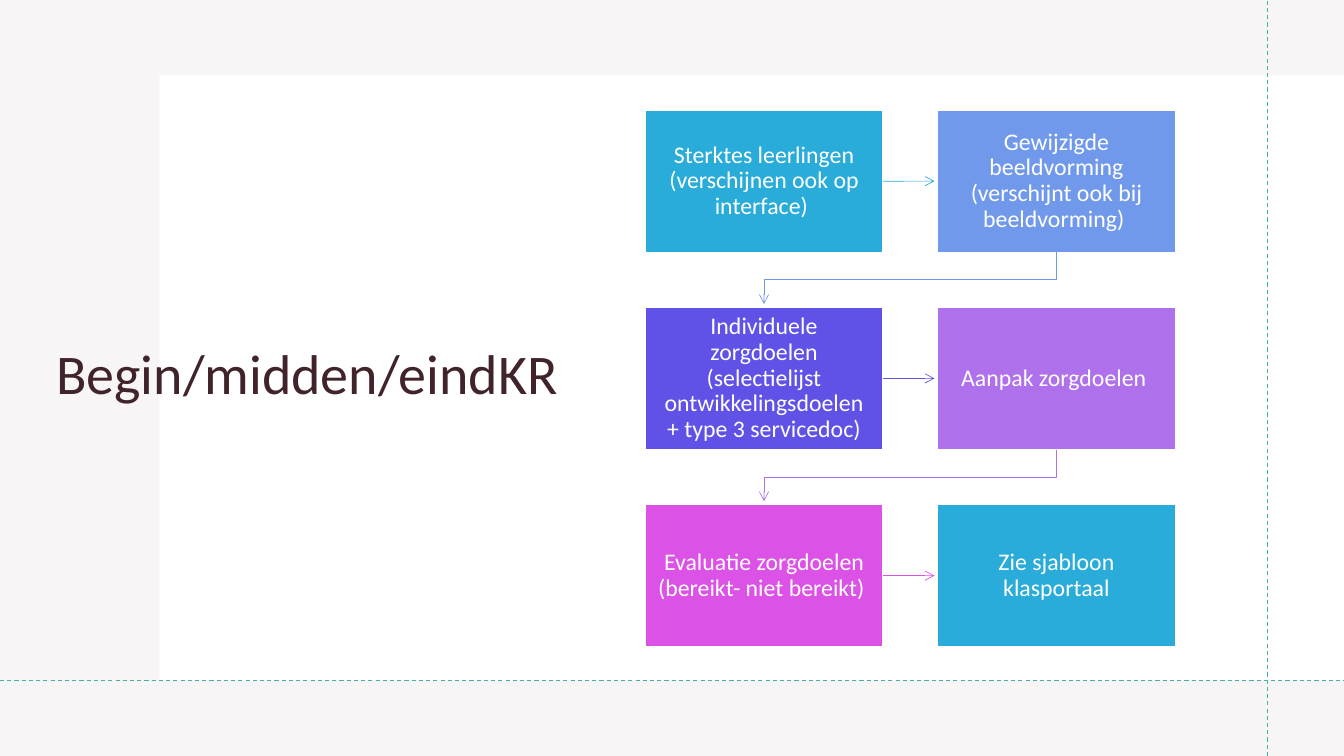
"""Build the Begin/midden/eindKR slide: a title beside a six-step flow of boxes."""
from dataclasses import dataclass

from lxml import etree
from pptx import Presentation
from pptx import util as u
from pptx.dml.color import RGBColor
from pptx.enum import dml, shapes, text
from pptx.oxml.ns import qn

COLORS = {
    "white": "FFFFFF", "backdrop": "F7F5F5", "title": "412429", "guide": "3FB2A0",
    "cyan": "2AACDA", "blue": "7199EB", "indigo": "6052E7",
    "purple": "AF71EB", "magenta": "DC52E7",
}
SLIDE_W, SLIDE_H = 33.87, 19.05
FLOW_LEFT, FLOW_TOP = 16.26, 2.77
BOX_W, BOX_H, GAP = 5.99, 3.59, 1.38
ARROW_STOP = 0.08
COLUMNS = 2


@dataclass
class Step:
    label: str
    color: str


@dataclass
class Guide:
    x1: float
    y1: float
    x2: float
    y2: float


STEPS = [
    Step("Sterktes leerlingen (verschijnen ook op interface) ", "cyan"),
    Step("Gewijzigde beeldvorming (verschijnt ook bij beeldvorming) ", "blue"),
    Step("Individuele zorgdoelen (selectielijst ontwikkelingsdoelen + type 3 servicedoc)", "indigo"),
    Step("Aanpak zorgdoelen ", "purple"),
    Step("Evaluatie zorgdoelen (bereikt- niet bereikt) ", "magenta"),
    Step("Zie sjabloon klasportaal", "cyan"),
]
GUIDES = [Guide(31.93, SLIDE_H, 31.93, 0), Guide(0, 17.15, SLIDE_W, 17.15)]


def rgb(name: str) -> RGBColor:
    return RGBColor.from_string(COLORS[name])


def add_rect(s, x: float, y: float, w: float, h: float, color: str):
    sp = s.shapes.add_shape(shapes.MSO_SHAPE.RECTANGLE, u.Cm(x), u.Cm(y), u.Cm(w), u.Cm(h))
    sp.shadow.inherit = False
    sp.fill.solid()
    sp.fill.fore_color.rgb = rgb(color)
    sp.line.fill.background()
    return sp


def write(sp, label: str, size: float, color: str, align) -> None:
    tf = sp.text_frame
    tf.word_wrap = True
    tf.vertical_anchor = text.MSO_ANCHOR.MIDDLE
    p = tf.paragraphs[0]
    p.text = label
    p.alignment = align
    p.line_spacing = 0.9
    p.font.name = "Calibri"
    p.font.size = u.Pt(size)
    p.font.color.rgb = rgb(color)


def add_title(s, label: str) -> None:
    sp = s.shapes.add_textbox(u.Cm(1.17), u.Cm(2.82), u.Cm(13.51), u.Cm(13.31))
    write(sp, label, 40, "title", text.PP_ALIGN.LEFT)


def add_line(s, x1: float, y1: float, x2: float, y2: float, color: str, width: float):
    cx = s.shapes.add_connector(
        shapes.MSO_CONNECTOR.STRAIGHT, u.Cm(x1), u.Cm(y1), u.Cm(x2), u.Cm(y2))
    cx.line.color.rgb = rgb(color)
    cx.line.width = u.Pt(width)
    etree.SubElement(cx._element.spPr, qn("a:effectLst"))
    return cx


def add_arrowhead(sp) -> None:
    etree.SubElement(sp.line._get_or_add_ln(), qn("a:tailEnd"), type="arrow")


def box_origin(index: int) -> tuple[float, float]:
    row, col = divmod(index, COLUMNS)
    return FLOW_LEFT + col * (BOX_W + GAP), FLOW_TOP + row * (BOX_H + GAP)


def add_box(s, index: int, step: Step):
    sp = add_rect(s, *box_origin(index), BOX_W, BOX_H, step.color)
    sp.line.color.rgb = rgb("white")
    sp.line.width = u.Pt(1)
    tf = sp.text_frame
    tf.margin_left = tf.margin_right = tf.margin_top = tf.margin_bottom = u.Cm(0.3)
    write(sp, step.label, 17, "white", text.PP_ALIGN.CENTER)
    return sp


def add_arrow_across(s, box, index: int, color: str) -> None:
    x, y = box_origin(index)
    x, y = x + BOX_W, y + BOX_H / 2
    cx = add_line(s, x, y, x + GAP - ARROW_STOP, y, color, 0.5)
    cx.begin_connect(box, 3)
    add_arrowhead(cx)


def add_arrow_down(s, index: int, color: str) -> None:
    x, y = box_origin(index)
    x, y = x + BOX_W / 2, y + BOX_H
    x_next = FLOW_LEFT + BOX_W / 2
    route = [(x, y + GAP / 2), (x_next, y + GAP / 2), (x_next, y + GAP - ARROW_STOP)]
    fb = s.shapes.build_freeform(u.Cm(x), u.Cm(y))
    fb.add_line_segments([(u.Cm(px), u.Cm(py)) for px, py in route], close=False)
    sp = fb.convert_to_shape()
    sp.shadow.inherit = False
    sp.fill.background()
    sp.line.color.rgb = rgb(color)
    sp.line.width = u.Pt(0.5)
    add_arrowhead(sp)


def add_flow(s) -> None:
    boxes = [add_box(s, i, step) for i, step in enumerate(STEPS)]
    for i, step in enumerate(STEPS[:-1]):
        if i % COLUMNS < COLUMNS - 1:
            add_arrow_across(s, boxes[i], i, step.color)
        else:
            add_arrow_down(s, i, step.color)


def main() -> None:
    prs = Presentation()
    prs.slide_width, prs.slide_height = u.Cm(SLIDE_W), u.Cm(SLIDE_H)
    s = prs.slides.add_slide(prs.slide_layouts[6])
    add_rect(s, 0, 0, SLIDE_W, SLIDE_H, "backdrop")
    add_rect(s, 4.02, 1.9, SLIDE_W - 4.02, 15.25, "white")
    add_title(s, "Begin/midden/eindKR")
    for g in GUIDES:
        cx = add_line(s, g.x1, g.y1, g.x2, g.y2, "guide", 0.75)
        cx.line.dash_style = dml.MSO_LINE.DASH
    add_flow(s)
    prs.save("out.pptx")


if __name__ == "__main__":
    main()
